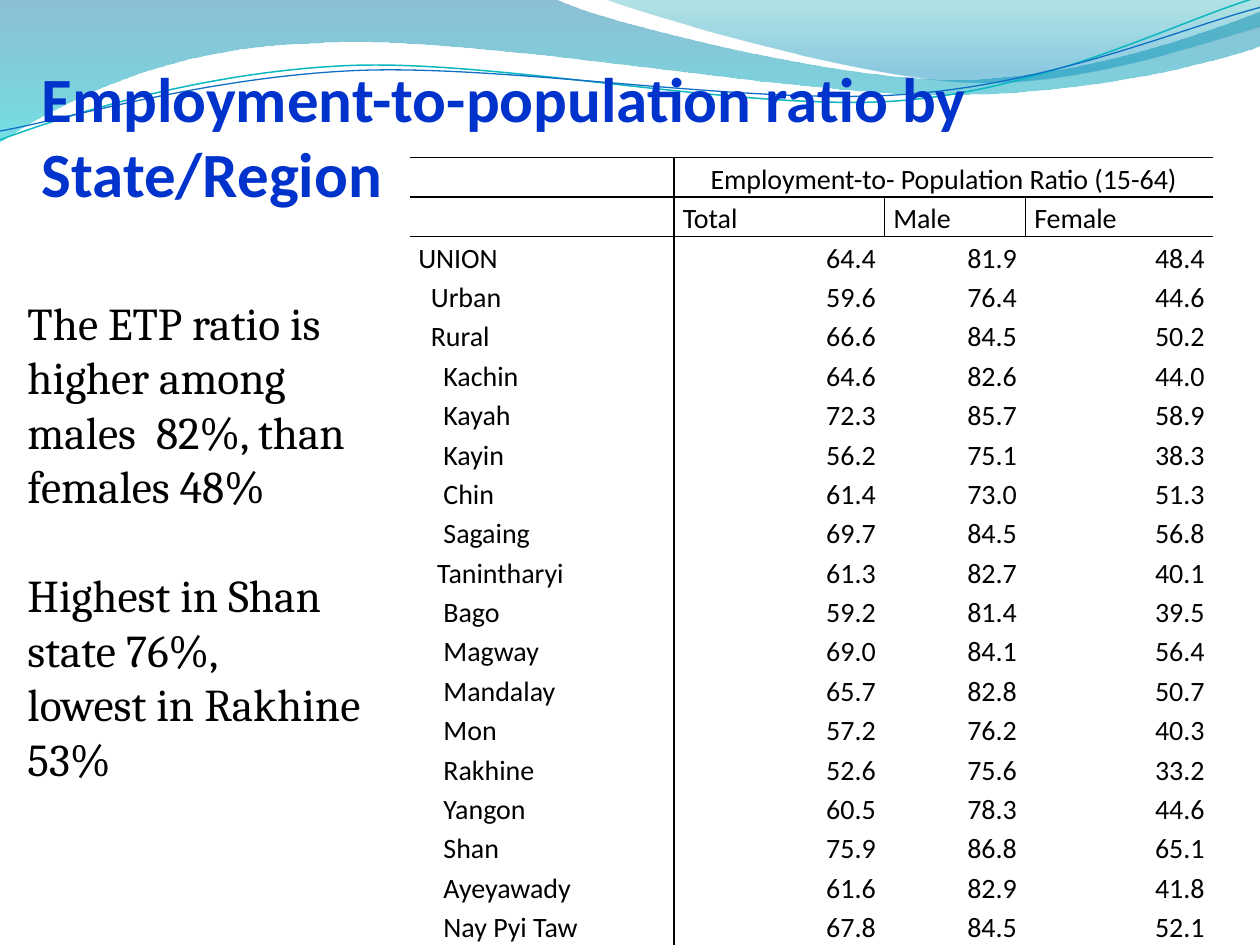
from math import cos, radians, sin

from lxml import etree
from pptx import Presentation
from pptx.dml.color import RGBColor
from pptx.enum.text import MSO_ANCHOR, MSO_AUTO_SIZE, PP_ALIGN
from pptx.oxml.ns import qn
from pptx.util import Inches, Pt

LEFT, CENTER, RIGHT = PP_ALIGN.LEFT, PP_ALIGN.CENTER, PP_ALIGN.RIGHT
BOTTOM = MSO_ANCHOR.BOTTOM
NO_FIT, GROW = MSO_AUTO_SIZE.NONE, MSO_AUTO_SIZE.SHAPE_TO_FIT_TEXT

THEME = {
    "title": ("Calibri", 36, "0033CC"),
    "table": ("Calibri", 16, "000000"),
    "body": ("Cambria", 26, "000000"),
    "border": "000000",
    "plain_table_style": "{2D5ABB26-0587-4C30-8999-92F81FD0307C}",
}

TITLE = "Employment-to-population ratio by State/Region"
COMMENTS = [
    ("The ETP ratio is higher among", 0),
    ("males  82%, than females 48%", 0),
    ("Highest in Shan state 76%,", 31),
    ("lowest in Rakhine 53%", 0),
]
TABLE_HEADING = "Employment-to- Population Ratio (15-64)"
COLUMN_HEADINGS = ["", "Total", "Male", "Female"]
REGIONS = [
    ("UNION", 0, "64.4", "81.9", "48.4"),
    ("Urban", 0.1, "59.6", "76.4", "44.6"),
    ("Rural", 0.1, "66.6", "84.5", "50.2"),
    ("Kachin", 0.2, "64.6", "82.6", "44.0"),
    ("Kayah", 0.2, "72.3", "85.7", "58.9"),
    ("Kayin", 0.2, "56.2", "75.1", "38.3"),
    ("Chin", 0.2, "61.4", "73.0", "51.3"),
    ("Sagaing", 0.2, "69.7", "84.5", "56.8"),
    ("Tanintharyi", 0.15, "61.3", "82.7", "40.1"),
    ("Bago", 0.2, "59.2", "81.4", "39.5"),
    ("Magway", 0.2, "69.0", "84.1", "56.4"),
    ("Mandalay", 0.2, "65.7", "82.8", "50.7"),
    ("Mon", 0.2, "57.2", "76.2", "40.3"),
    ("Rakhine", 0.2, "52.6", "75.6", "33.2"),
    ("Yangon", 0.2, "60.5", "78.3", "44.6"),
    ("Shan", 0.2, "75.9", "86.8", "65.1"),
    ("Ayeyawady", 0.2, "61.6", "82.9", "41.8"),
    ("Nay Pyi Taw", 0.2, "67.8", "84.5", "52.1"),
]
COLUMN_WIDTHS = [2.1, 1.67, 1.12, 1.49]
ROW_HEIGHT = 0.31

# Each step holds two numbers for a line or six for a curve.
WAVES = [
    ([(0, 0), (4.4, -0.01), (4.76, 0.17, 6.64, 0.63, 7.58, 0.63),
      (8.53, 0.63, 9.58, 0.26, 10, 0.09), (10.01, 0.36),
      (9.83, 0.44, 8.7, 0.76, 7.46, 0.75), (6.22, 0.75, 3.82, 0.28, 2.57, 0.34),
      (1.29, 0.36, 0.46, 0.83, -0.01, 1.13), (0, 0)],
     [(0, "0074A1", 45), (1, "00C6CF", 55)]),
    ([(4.79, -0.01), (5.09, 0.11, 6.82, 0.62, 7.69, 0.65),
      (8.56, 0.69, 9.61, 0.32, 10, 0.21), (10, 0), (4.79, -0.01)],
     [(0, "00A1A9", 30), (0.8, "008BBF", 45)]),
]
STRAND_TILT = 2.7
STRANDS = [
    ([(0, 1.11), (0.48, 0.93, 1.58, 0.57, 2.77, 0.52),
      (3.95, 0.47, 5.93, 0.89, 7.13, 0.8), (8.33, 0.71, 9.38, 0.15, 9.98, -0.02)],
     (4.99, 0.58), "0AB8BF", 0.85),
    ([(0, 1.04), (0.47, 0.96, 1.64, 0.61, 2.83, 0.56),
      (4.03, 0.51, 5.97, 0.84, 7.17, 0.75), (8.36, 0.67, 9.41, 0.21, 10, 0.06)],
     (5, 0.59), "0F6FC6", 0.75),
]


def add_outline(slide, steps, close):
    points = [(Inches(x), Inches(y)) for step in steps
              for x, y in zip(step[::2], step[1::2])]
    builder = slide.shapes.build_freeform(*points[0])
    builder.add_line_segments(points[1:], close=close)
    shape = builder.convert_to_shape()
    shape.shadow.inherit = False
    segments = iter(list(shape.element.iter(qn("a:lnTo"))))
    for step in steps[1:]:
        segment = next(segments)
        if len(step) == 6:
            curve = etree.Element(qn("a:cubicBezTo"))
            segment.addprevious(curve)
            for line in (segment, next(segments), next(segments)):
                curve.append(line[0])
                line.getparent().remove(line)
    return shape


def add_wave(slide, steps, stops):
    shape = add_outline(slide, steps, True)
    shape.line.fill.background()
    shape.fill.gradient()
    shape.fill.gradient_angle = 270
    for stop, (position, color, _) in zip(shape.fill.gradient_stops, stops):
        stop.position = position
        stop.color.rgb = RGBColor.from_string(color)
    gradient = shape.element.find(".//" + qn("a:gradFill"))
    for color, (_, _, opacity) in zip(gradient.iter(qn("a:srgbClr")), stops):
        etree.SubElement(color, qn("a:alpha"), val=str(opacity * 1000))


def level(step, center):
    angle = radians(STRAND_TILT)
    numbers = []
    for x, y in zip(step[::2], step[1::2]):
        dx, dy = x - center[0], y - center[1]
        numbers += [center[0] + dx * cos(angle) - dy * sin(angle),
                    center[1] + dx * sin(angle) + dy * cos(angle)]
    return numbers


def add_strand(slide, steps, center, color, width):
    shape = add_outline(slide, [level(step, center) for step in steps], False)
    shape.rotation = 360 - STRAND_TILT
    shape.fill.background()
    shape.line.color.rgb = RGBColor.from_string(color)
    shape.line.width = Pt(width)


def write(paragraph, text, style, bold=False, align=LEFT):
    name, size, color = THEME[style]
    paragraph.alignment = align
    run = paragraph.add_run()
    run.text = text
    run.font.name, run.font.size, run.font.bold = name, Pt(size), bold
    run.font.color.rgb = RGBColor.from_string(color)


def set_borders(cell, sides):
    properties = cell._tc.get_or_add_tcPr()
    for position, side in enumerate("LRTB"):
        line = etree.Element(qn("a:ln" + side), w=str(Pt(1)))
        if side in sides:
            fill = etree.SubElement(line, qn("a:solidFill"))
            etree.SubElement(fill, qn("a:srgbClr"), val=THEME["border"])
        else:
            etree.SubElement(line, qn("a:noFill"))
        properties.insert(position, line)


def border_sides(row, column, last_row):
    sides = "TB" if row < 2 else "T" if row == 2 else "B" if row == last_row else ""
    if column == 0 or (row == 1 and column < 3):
        sides += "R"
    if column == 1 or (row == 1 and column > 0):
        sides += "L"
    return sides


def add_ratio_table(slide):
    rows = [["", TABLE_HEADING, "", ""], COLUMN_HEADINGS]
    rows += [[name, *values] for name, _, *values in REGIONS]
    indents = [0, 0] + [region[1] for region in REGIONS]
    frame = slide.shapes.add_table(
        len(rows), len(COLUMN_WIDTHS), Inches(3.25), Inches(1.25),
        Inches(sum(COLUMN_WIDTHS)), Inches(ROW_HEIGHT * len(rows)))
    table = frame.table
    table.first_row = table.horz_banding = False
    frame.element.find(".//" + qn("a:tableStyleId")).text = THEME["plain_table_style"]
    for column, width in zip(table.columns, COLUMN_WIDTHS):
        column.width = Inches(width)
    table.cell(0, 1).merge(table.cell(0, 3))
    for r, values in enumerate(rows):
        table.rows[r].height = Inches(ROW_HEIGHT)
        for c, text in enumerate(values):
            cell = table.cell(r, c)
            cell.fill.background()
            cell.vertical_anchor = BOTTOM
            cell.margin_top = cell.margin_bottom = 0
            cell.margin_left = Inches(0.07 + (indents[r] if c == 0 else 0))
            cell.margin_right = Inches(0.07)
            set_borders(cell, border_sides(r, c, len(rows) - 1))
            if text:
                paragraph = cell.text_frame.paragraphs[0]
                paragraph.line_spacing = 1.15
                align = CENTER if r == 0 else RIGHT if r > 1 and c else LEFT
                write(paragraph, text, "table", align=align)


def place_title(slide):
    title = slide.shapes.title
    slide.shapes.element.append(title.element)
    title.left, title.top = Inches(0.33), Inches(0.42)
    title.width, title.height = Inches(9.5), Inches(1.25)
    frame = title.text_frame
    frame.auto_size, frame.word_wrap = NO_FIT, True
    frame.vertical_anchor = BOTTOM
    frame.margin_left = frame.margin_right = frame.margin_bottom = 0
    frame.margin_top = Inches(0.05)
    write(frame.paragraphs[0], TITLE, "title", bold=True)


def add_comments(slide):
    box = slide.shapes.add_textbox(Inches(0.12), Inches(2.29), Inches(2.96), Inches(4.04))
    frame = box.text_frame
    frame.word_wrap, frame.auto_size = True, GROW
    for index, (text, gap) in enumerate(COMMENTS):
        paragraph = frame.add_paragraph() if index else frame.paragraphs[0]
        paragraph.space_before = Pt(gap)
        write(paragraph, text, "body")


def main():
    presentation = Presentation()
    presentation.slide_width, presentation.slide_height = Inches(10), Inches(7.5)
    slide = presentation.slides.add_slide(presentation.slide_layouts[5])
    for wave in WAVES:
        add_wave(slide, *wave)
    for strand in STRANDS:
        add_strand(slide, *strand)
    place_title(slide)
    add_ratio_table(slide)
    add_comments(slide)
    presentation.save("out.pptx")


if __name__ == "__main__":
    main()
